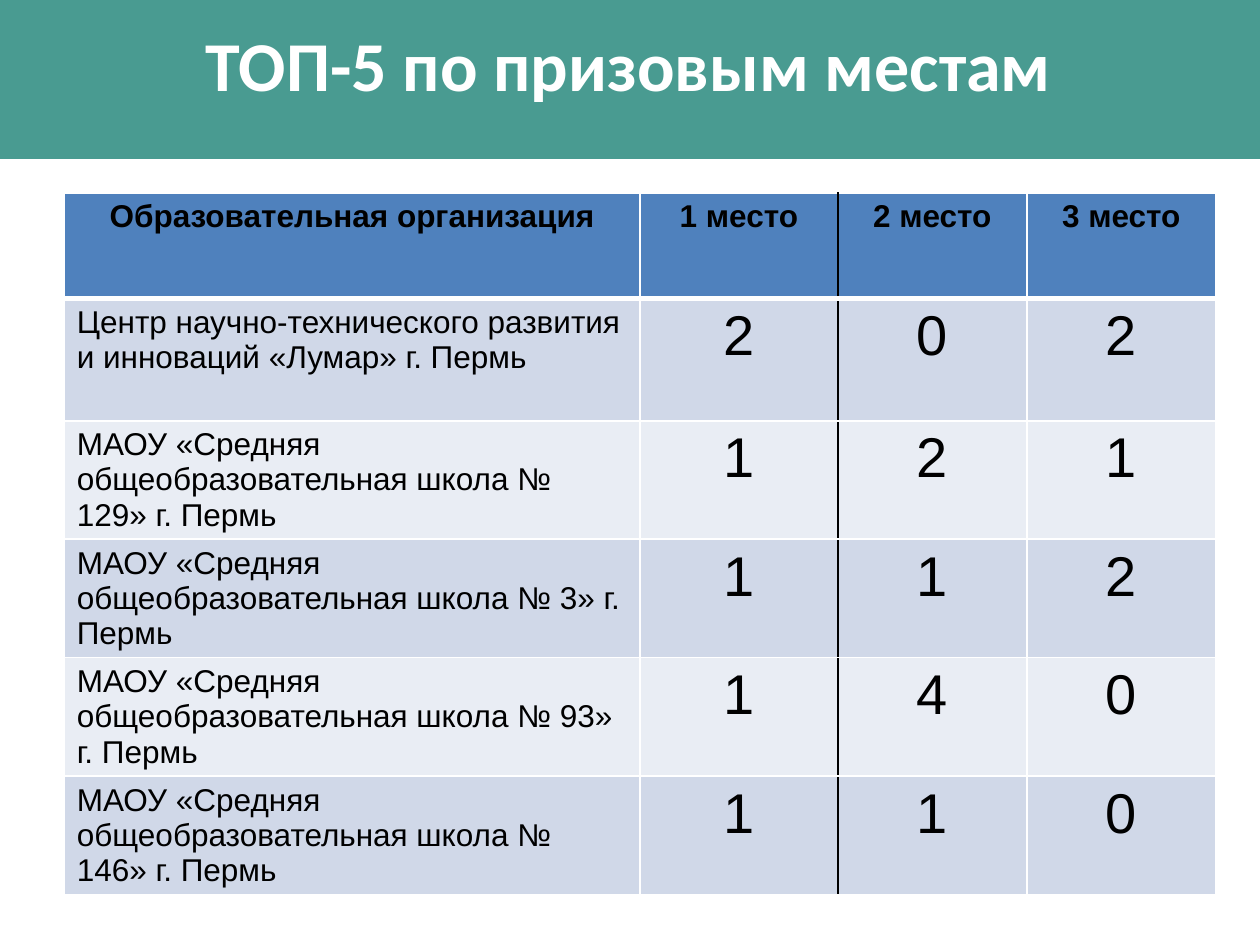
from dataclasses import dataclass

from lxml.etree import SubElement
from pptx import Presentation
from pptx.dml.color import RGBColor
from pptx.enum.shapes import MSO_SHAPE as Shape
from pptx.enum.text import MSO_ANCHOR as Anchor, PP_ALIGN as Align
from pptx.oxml.ns import qn
from pptx.util import Inches, Pt


@dataclass(frozen=True)
class Theme:
    band: str = "499B91"
    header: str = "4F81BD"
    stripes: tuple = ("D0D8E8", "E9EDF4")
    light: str = "FFFFFF"
    dark: str = "000000"
    title_font: str = "Calibri"
    body_font: str = "Arial"
    title_size: int = 40
    body_size: int = 18
    score_size: int = 32
    rule: int = 1
    header_rule: int = 3


THEME = Theme()
WIDTH, HEIGHT = 10, 7.5
COLUMNS = (4.57, 1.57, 1.5, 1.5)
ROWS = (0.84, 0.97, 0.84, 0.84, 0.84, 0.84)
DARK_RULE = 2

HEADINGS = ("Образовательная организация", "1 место", "2 место", "3 место")
RANKING = (
    ("Центр научно-технического развития и инноваций «Лумар» г. Пермь", 2, 0, 2),
    ("МАОУ «Средняя общеобразовательная школа № 129» г. Пермь", 1, 2, 1),
    ("МАОУ «Средняя общеобразовательная школа № 3» г. Пермь", 1, 1, 2),
    ("МАОУ «Средняя общеобразовательная школа № 93» г. Пермь", 1, 4, 0),
    ("МАОУ «Средняя общеобразовательная школа № 146» г. Пермь", 1, 1, 0),
)


def write(frame, text, *, size, font=THEME.body_font, color=THEME.dark,
          bold=False, align=Align.LEFT, spacing=None):
    paragraph = frame.paragraphs[0]
    paragraph.alignment = align
    paragraph.line_spacing = spacing
    run = paragraph.add_run()
    run.text = text
    run.font.name = font
    run.font.size = Pt(size)
    run.font.bold = bold
    run.font.color.rgb = RGBColor.from_string(color)


def paint(fill, color):
    fill.solid()
    fill.fore_color.rgb = RGBColor.from_string(color)


def draw_borders(cell, **sides):
    properties = cell._tc.get_or_add_tcPr()
    for position, (side, (color, width)) in enumerate(sides.items()):
        line = SubElement(properties, qn(f"a:ln{side}"), w=str(Pt(width)))
        solid = SubElement(line, qn("a:solidFill"))
        SubElement(solid, qn("a:srgbClr"), val=color)
        properties.insert(position, line)


def add_heading(slide, left, top, width, height):
    band = slide.shapes.add_shape(Shape.RECTANGLE, left, top, width, height)
    band.shadow.inherit = False
    paint(band.fill, THEME.band)
    band.line.color.rgb = RGBColor.from_string(THEME.band)
    band.line.width = Pt(2)

    title = slide.shapes.title
    title.element.addprevious(band.element)
    title.left, title.top = left + int(width * 0.055), top
    title.width, title.height = int(width * 0.9), int(height * 0.87)
    title.text_frame.word_wrap = True
    title.text_frame.vertical_anchor = Anchor.MIDDLE
    write(title.text_frame, "ТОП-5 по призовым местам ", size=THEME.title_size,
          font=THEME.title_font, color=THEME.light, bold=True,
          align=Align.CENTER, spacing=0.9)


def format_cell(cell, text, row, column):
    is_header = row == 0
    is_score = not is_header and column > 0
    write(cell.text_frame, str(text), bold=is_header,
          size=THEME.score_size if is_score else THEME.body_size,
          align=Align.CENTER if is_header or is_score else Align.LEFT)
    paint(cell.fill, THEME.header if is_header else THEME.stripes[(row - 1) % 2])

    def vertical(edge):
        return THEME.dark if edge == DARK_RULE else THEME.light, THEME.rule

    def horizontal(edge):
        return THEME.light, THEME.header_rule if edge == 1 else THEME.rule

    draw_borders(cell, L=vertical(column), R=vertical(column + 1),
                 T=horizontal(row), B=horizontal(row + 1))


def add_ranking(slide, left, top, width, height):
    table = slide.shapes.add_table(len(ROWS), len(COLUMNS), left, top, width, height).table
    for column, share in zip(table.columns, COLUMNS):
        column.width = int(width * share / sum(COLUMNS))
    for row, share in zip(table.rows, ROWS):
        row.height = int(height * share / sum(ROWS))
    for row, values in enumerate((HEADINGS, *RANKING)):
        for column, value in enumerate(values):
            format_cell(table.cell(row, column), value, row, column)


def main():
    deck = Presentation()
    deck.slide_width, deck.slide_height = Inches(WIDTH), Inches(HEIGHT)
    slide = deck.slides.add_slide(deck.slide_layouts[5])
    add_heading(slide, 0, 0, deck.slide_width, deck.slide_height // 6)
    add_ranking(slide, Inches(0.51), Inches(1.53),
                Inches(sum(COLUMNS)), Inches(sum(ROWS)))
    deck.save("out.pptx")


if __name__ == "__main__":
    main()
